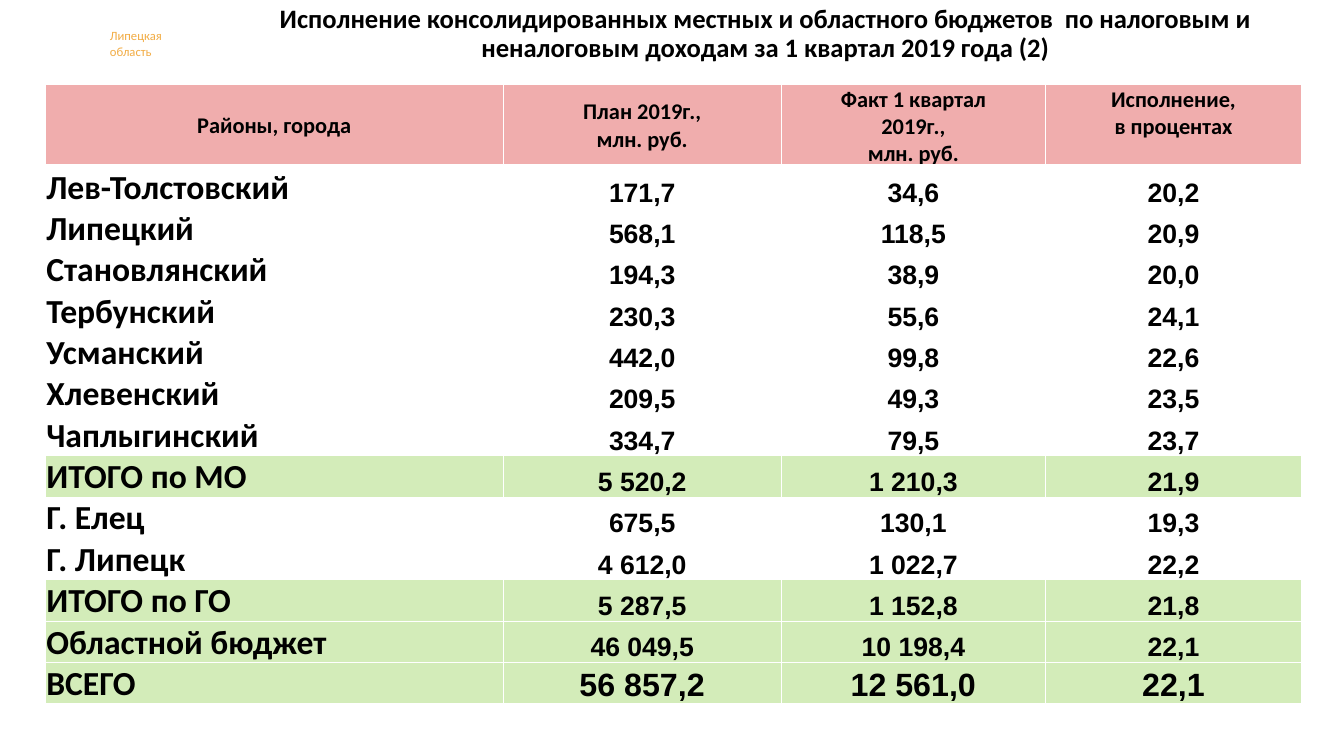
from dataclasses import dataclass

from lxml.etree import SubElement
from pptx import Presentation
from pptx.dml.color import RGBColor
from pptx.enum.text import MSO_ANCHOR, PP_ALIGN
from pptx.oxml.ns import qn
from pptx.util import Inches, Pt

# Content
REGION = "Липецкая\nобласть"
TITLE = ("Исполнение консолидированных местных и областного бюджетов  "
         "по налоговым и неналоговым доходам за 1 квартал 2019 года (2)")
HEADINGS = ("Районы, города", "План 2019г.,\nмлн. руб.",
            "Факт 1 квартал\n2019г.,\nмлн. руб.", "Исполнение,\nв процентах")
BUDGETS = [
    ("Лев-Толстовский", "171,7", "34,6", "20,2"),
    ("Липецкий", "568,1", "118,5", "20,9"),
    ("Становлянский", "194,3", "38,9", "20,0"),
    ("Тербунский", "230,3", "55,6", "24,1"),
    ("Усманский", "442,0", "99,8", "22,6"),
    ("Хлевенский", "209,5", "49,3", "23,5"),
    ("Чаплыгинский", "334,7", "79,5", "23,7"),
    ("ИТОГО по МО", "5 520,2", "1 210,3", "21,9"),
    ("Г. Елец", "675,5", "130,1", "19,3"),
    ("Г. Липецк", "4 612,0", "1 022,7", "22,2"),
    ("ИТОГО по ГО", "5 287,5", "1 152,8", "21,8"),
    ("Областной бюджет", "46 049,5", "10 198,4", "22,1"),
    ("ВСЕГО", "56 857,2", "12 561,0", "22,1"),
]
GRAND_TOTAL = "ВСЕГО"
TOTALS = {"ИТОГО по МО", "ИТОГО по ГО", "Областной бюджет", GRAND_TOTAL}

# Grid, in inches
SLIDE_WIDTH, SLIDE_HEIGHT = 13.33, 7.5
REGION_BOX = (1.02, 0.24, 0.91, 0.39)
TITLE_BOX = (2.1, 0, 10.98, 0.68)
TABLE_LEFT, TABLE_TOP = 0.45, 0.84
COLUMNS = (4.54, 2.76, 2.62, 2.54)
HEADING_ROW, BUDGET_ROW = 0.8, 0.41
BOX_MARGINS = (0.07, 0.04, 0.07, 0.04)
CELL_MARGINS = (0.01, 0.01, 0.01, 0)
FIRST_HEADING_MARGINS = (0.1, 0.05, 0.1, 0.05)


@dataclass(frozen=True)
class Theme:
    text: str = "000000"
    region: str = "F2AC44"
    heading_fill: str = "F0ADAD"
    total_fill: str = "D3ECB9"
    plain: str = "FFFFFF"
    label_font: str = "Calibri"
    figure_font: str = "Arial"
    region_size: int = 9
    title_size: int = 19
    heading_size: int = 16
    label_size: int = 24
    figure_size: int = 19
    grand_size: int = 23
    border: int = 1
    heading_border: int = 3


THEME = Theme()


def write(frame, text, *, size, font=THEME.label_font, color=THEME.text,
          bold=True, align=PP_ALIGN.CENTER, spacing=None):
    for index, line in enumerate(text.split("\n")):
        paragraph = frame.add_paragraph() if index else frame.paragraphs[0]
        paragraph.alignment = align
        if spacing:
            paragraph.line_spacing = spacing
        run = paragraph.add_run()
        run.text = line
        run.font.size, run.font.bold, run.font.name = Pt(size), bold, font
        run.font.color.rgb = RGBColor.from_string(color)


def set_margins(holder, margins):
    (holder.margin_left, holder.margin_top,
     holder.margin_right, holder.margin_bottom) = map(Inches, margins)


def add_text(slide, box, text, anchor=MSO_ANCHOR.TOP, **style):
    frame = slide.shapes.add_textbox(*map(Inches, box)).text_frame
    frame.word_wrap = True
    frame.vertical_anchor = anchor
    set_margins(frame, BOX_MARGINS)
    write(frame, text, **style)


def add_borders(cell, **widths):
    # Borders come before the fill in the cell properties
    properties = cell._tc.get_or_add_tcPr()
    for side in "LRTB":
        line = SubElement(properties, qn(f"a:ln{side}"),
                          w=str(Pt(widths.get(side, THEME.border))))
        fill = SubElement(line, qn("a:solidFill"))
        SubElement(fill, qn("a:srgbClr"), val=THEME.plain)


def fill_cell(cell, text, fill, anchor, margins=CELL_MARGINS, borders=None, **style):
    add_borders(cell, **(borders or {}))
    cell.fill.solid()
    cell.fill.fore_color.rgb = RGBColor.from_string(fill)
    cell.vertical_anchor = anchor
    set_margins(cell, margins)
    write(cell.text_frame, text, **style)


def add_budget_table(slide):
    heights = [HEADING_ROW] + [BUDGET_ROW] * len(BUDGETS)
    table = slide.shapes.add_table(
        len(heights), len(COLUMNS), Inches(TABLE_LEFT), Inches(TABLE_TOP),
        Inches(sum(COLUMNS)), Inches(sum(heights))).table
    table.horz_banding = False
    for column, width in zip(table.columns, COLUMNS):
        column.width = Inches(width)
    for row, height in zip(table.rows, heights):
        row.height = Inches(height)

    # Headings: the last one starts level with its three-line neighbour
    last = len(HEADINGS) - 1
    for index, heading in enumerate(HEADINGS):
        fill_cell(table.cell(0, index), heading, THEME.heading_fill,
                  MSO_ANCHOR.TOP if index == last else MSO_ANCHOR.MIDDLE,
                  margins=CELL_MARGINS if index else FIRST_HEADING_MARGINS,
                  borders={"B": THEME.heading_border}, size=THEME.heading_size)

    # Districts, cities and totals
    for row, (name, *figures) in enumerate(BUDGETS, start=1):
        fill = THEME.total_fill if name in TOTALS else THEME.plain
        borders = {"T": THEME.heading_border} if row == 1 else None
        size = THEME.grand_size if name == GRAND_TOTAL else THEME.figure_size
        fill_cell(table.cell(row, 0), name, fill, MSO_ANCHOR.BOTTOM, borders=borders,
                  size=THEME.label_size, align=PP_ALIGN.LEFT)
        for column, figure in enumerate(figures, start=1):
            fill_cell(table.cell(row, column), figure, fill, MSO_ANCHOR.BOTTOM,
                      borders=borders, size=size, font=THEME.figure_font)


def main():
    deck = Presentation()
    deck.slide_width, deck.slide_height = Inches(SLIDE_WIDTH), Inches(SLIDE_HEIGHT)
    slide = deck.slides.add_slide(deck.slide_layouts[6])
    add_text(slide, REGION_BOX, REGION, size=THEME.region_size, color=THEME.region,
             bold=False, align=PP_ALIGN.LEFT)
    add_budget_table(slide)
    add_text(slide, TITLE_BOX, TITLE, anchor=MSO_ANCHOR.MIDDLE,
             size=THEME.title_size, spacing=0.9)
    deck.save("out.pptx")


if __name__ == "__main__":
    main()
